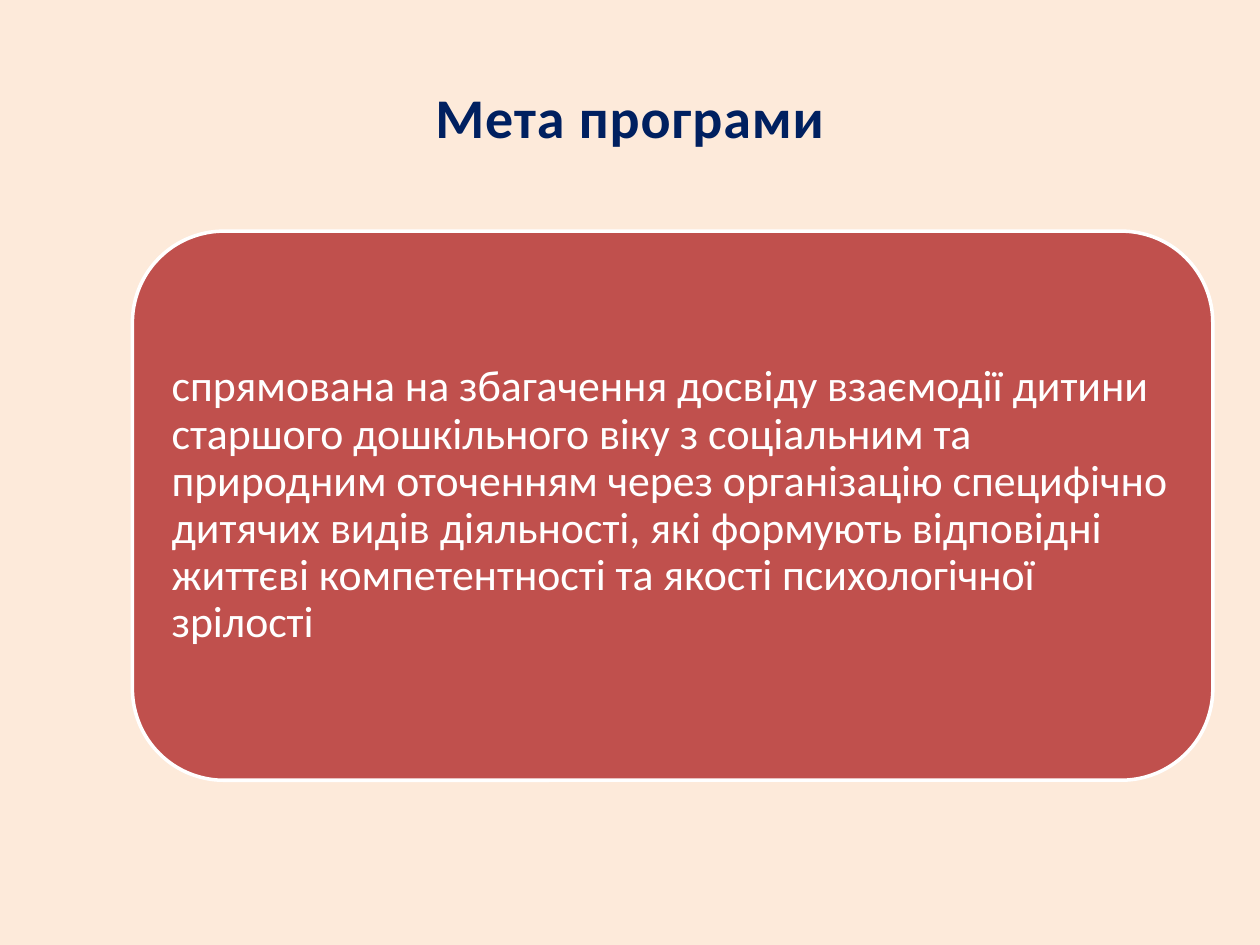
from pptx import Presentation
from pptx.dml.color import RGBColor
from pptx.enum.shapes import MSO_SHAPE
from pptx.enum.text import MSO_ANCHOR, PP_ALIGN
from pptx.util import Cm, Pt

ROUNDED = MSO_SHAPE.ROUNDED_RECTANGLE
MIDDLE = MSO_ANCHOR.MIDDLE
CENTER = PP_ALIGN.CENTER
LEFT = PP_ALIGN.LEFT

COLORS = {"bg": "FDEADA", "title": "002060", "panel": "C0504D", "white": "FFFFFF"}

TITLE = "Мета програми"
GOAL = (
    "спрямована на збагачення досвіду взаємодії дитини старшого дошкільного віку "
    "з соціальним та природним оточенням через організацію специфічно дитячих "
    "видів діяльності, які формують відповідні життєві компетентності та якості "
    "психологічної зрілості"
)


def rgb(name):
    return RGBColor.from_string(COLORS[name])


def set_attrs(obj, values):
    for name, value in values.items():
        setattr(obj, name, value)


def add_text(shapes, box, text, color, font, paragraph):
    sp = shapes.add_textbox(*map(Cm, box))
    tf = sp.text_frame
    inset = Cm(0.25)
    set_attrs(tf, {
        "word_wrap": True, "vertical_anchor": MIDDLE,
        "margin_left": inset, "margin_right": inset,
        "margin_top": inset, "margin_bottom": inset,
    })
    p = tf.paragraphs[0]
    set_attrs(p, paragraph)
    r = p.add_run()
    r.text = text
    set_attrs(r.font, {"name": "Calibri", **font})
    r.font.color.rgb = rgb(color)
    return r


def add_title(s, box):
    r = add_text(s.shapes, box, TITLE, "title",
                 {"size": Pt(32), "bold": True}, {"alignment": CENTER})
    r._r.get_or_add_rPr().set("spc", "50")


def add_goal_panel(s, box):
    x, y, w, h = box
    group = s.shapes.add_group_shape()
    sp = group.shapes.add_shape(ROUNDED, *map(Cm, box))
    sp.shadow.inherit = False
    sp.fill.solid()
    sp.fill.fore_color.rgb = rgb("panel")
    sp.line.color.rgb = rgb("white")
    sp.line.width = Pt(2)
    pad = 0.54
    add_text(group.shapes, (x + pad, y + pad, w - 2 * pad, h - 2 * pad), GOAL, "white",
             {"size": Pt(25)},
             {"alignment": LEFT, "line_spacing": 0.9, "space_after": Pt(8.75)})


def main():
    prs = Presentation()
    set_attrs(prs, {"slide_width": Cm(25.4), "slide_height": Cm(19.05)})
    s = prs.slides.add_slide(prs.slide_layouts[6])
    s.background.fill.solid()
    s.background.fill.fore_color.rgb = rgb("bg")
    add_title(s, (1.27, 0.76, 22.86, 3.18))
    add_goal_panel(s, (2.67, 4.66, 21.78, 11.07))
    prs.save("out.pptx")


if __name__ == "__main__":
    main()
